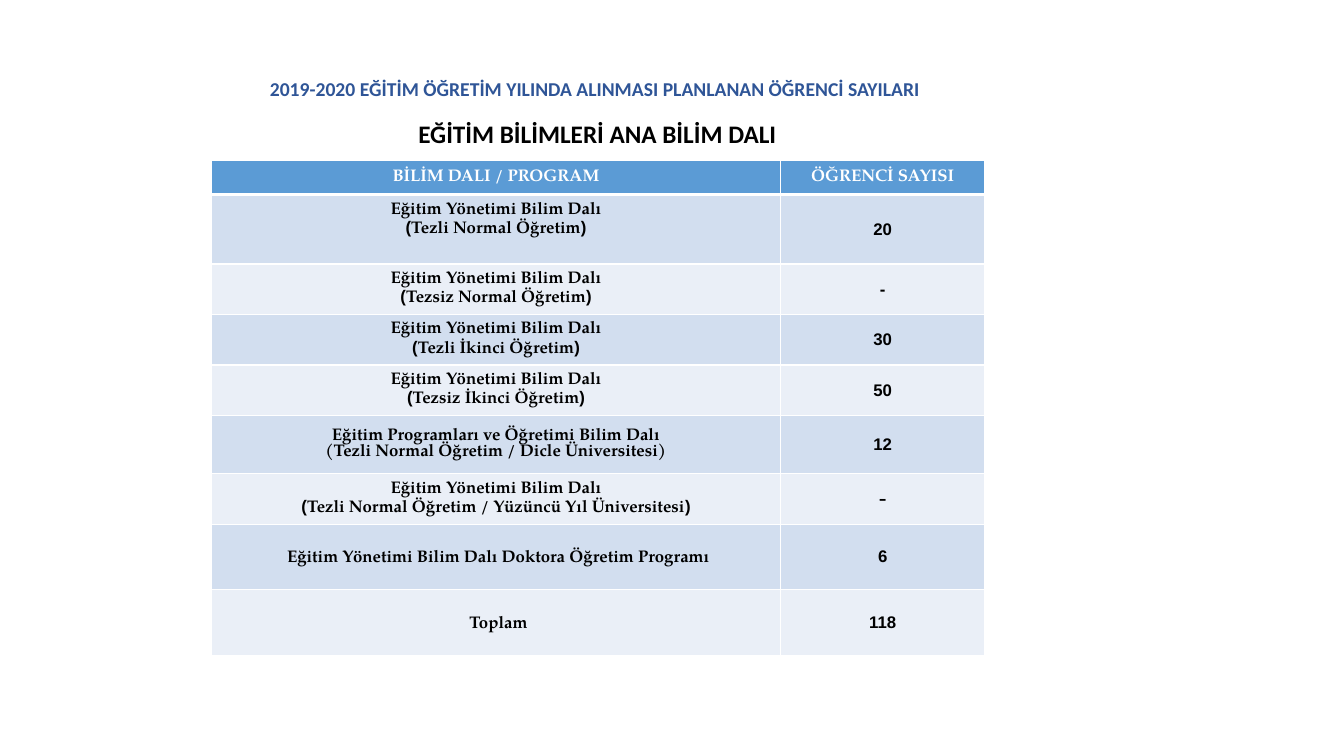
from pptx import Presentation
from pptx.dml.color import RGBColor
from pptx.enum.text import MSO_ANCHOR, MSO_AUTO_SIZE, PP_ALIGN
from pptx.oxml.ns import qn
from pptx.util import Inches, Pt
from lxml.etree import SubElement

# Content
TITLE = "2019-2020 EĞİTİM ÖĞRETİM YILINDA ALINMASI PLANLANAN ÖĞRENCİ SAYILARI "
SUBTITLE = "EĞİTİM BİLİMLERİ ANA BİLİM DALI"
MANAGEMENT = "Eğitim Yönetimi Bilim Dalı"
# Each row: height, program lines, student count
ROWS = [
    (0.34, ["BİLİM DALI / PROGRAM"], "ÖĞRENCİ SAYISI"),
    (0.69, [MANAGEMENT, "(Tezli Normal Öğretim)"], "20"),
    (0.5, [MANAGEMENT, "(Tezsiz Normal Öğretim)"], "-"),
    (0.5, [MANAGEMENT, "(Tezli İkinci Öğretim)"], "30"),
    (0.5, [MANAGEMENT, "(Tezsiz İkinci Öğretim)"], "50"),
    (0.58, ["Eğitim Programları ve Öğretimi Bilim Dalı",
            "(Tezli Normal Öğretim / Dicle Üniversitesi)"], "12"),
    (0.5, [MANAGEMENT, "(Tezli Normal Öğretim / Yüzüncü Yıl Üniversitesi)"], "-"),
    (0.65, [MANAGEMENT + " Doktora Öğretim Programı "], "6"),
    (0.65, ["Toplam "], "118"),
]
COLUMNS = [5.64, 2.03]
LEFT_TO_RIGHT = {(0, 0), (5, 0), (6, 1)}
PLAIN_DASH = (6, 1)
RAISED_CELL = (1, 0)
COLORS = {"title": "2F5597", "text": "000000", "white": "FFFFFF",
          "header": "5B9BD5", "odd": "D2DEEF", "even": "EAEFF7"}
HEADING_FONT, TABLE_FONT, COMPLEX_FONT = "Calibri", "TeX Gyre Pagella", "Arial"


def write(frame, lines, size=12, font=TABLE_FONT, color="text", bold=True,
          rtl=False, spacing=None):
    for index, line in enumerate(lines):
        paragraph = frame.paragraphs[0] if index == 0 else frame.add_paragraph()
        paragraph.alignment = PP_ALIGN.CENTER
        paragraph.line_spacing = spacing
        run = paragraph.add_run()
        run.text = line
        run.font.size, run.font.bold, run.font.name = Pt(size), bold, font
        run.font.color.rgb = RGBColor.from_string(COLORS[color])
        if rtl:
            paragraph._p.get_or_add_pPr().set("rtl", "1")
            SubElement(run._r.get_or_add_rPr(), qn("a:cs"), typeface=COMPLEX_FONT)


def add_borders(cell, **widths):
    properties = cell._tc.get_or_add_tcPr()
    for side in "LRTB":
        line = SubElement(properties, qn(f"a:ln{side}"), w=str(Pt(widths.get(side, 1))))
        fill = SubElement(line, qn("a:solidFill"))
        SubElement(fill, qn("a:srgbClr"), val=COLORS["white"])


presentation = Presentation()
presentation.slide_width, presentation.slide_height = Inches(13.33), Inches(7.5)
slide = presentation.slides.add_slide(presentation.slide_layouts[5])

# Headings
title = slide.shapes.title
title.left, title.top, title.width, title.height = map(Inches, (2.4, 0.71, 7.05, 0.34))
title.text_frame.vertical_anchor = MSO_ANCHOR.TOP
title.text_frame.auto_size = MSO_AUTO_SIZE.NONE
write(title.text_frame, [TITLE], size=14, font=HEADING_FONT, color="title")

subtitle = slide.shapes.add_textbox(*map(Inches, (4.03, 1.12, 3.79, 0.4)))
subtitle.text_frame.word_wrap = False
write(subtitle.text_frame, [SUBTITLE], size=18, font=HEADING_FONT)

# Student table
table = slide.shapes.add_table(
    len(ROWS), len(COLUMNS), Inches(2.1), Inches(1.59),
    Inches(sum(COLUMNS)), Inches(sum(row[0] for row in ROWS))).table
for column, width in zip(table.columns, COLUMNS):
    column.width = Inches(width)

for row, (height, program, count) in enumerate(ROWS):
    table.rows[row].height = Inches(height)
    for column, lines in enumerate((program, [count])):
        cell, place = table.cell(row, column), (row, column)
        cell.vertical_anchor = MSO_ANCHOR.MIDDLE
        cell.margin_left = cell.margin_right = Inches(0.15)
        cell.margin_top = Inches(0.05)
        cell.margin_bottom = Inches(0.23 if place == RAISED_CELL else 0.05)
        add_borders(cell, T=3 if row == 1 else 1, B=3 if row == 0 else 1)
        band = "header" if row == 0 else "odd" if row % 2 else "even"
        cell.fill.solid()
        cell.fill.fore_color.rgb = RGBColor.from_string(COLORS[band])
        style = dict(color="white" if row == 0 else "text", rtl=place not in LEFT_TO_RIGHT)
        if place == PLAIN_DASH:
            style.update(size=18, font=HEADING_FONT, bold=False)
        write(cell.text_frame, lines, **style)

presentation.save("out.pptx")
